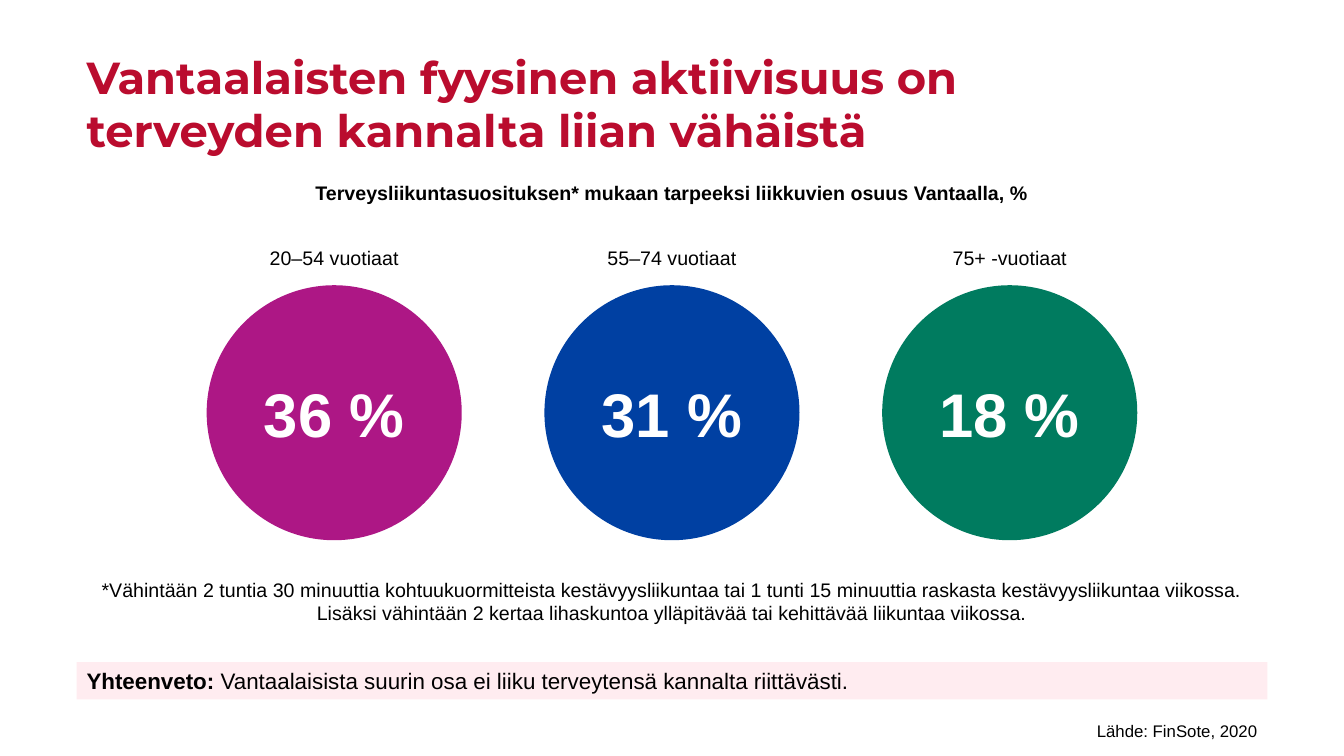
from lxml import etree
from pptx import Presentation
from pptx.dml.color import RGBColor
from pptx.enum.shapes import MSO_SHAPE
from pptx.enum.text import MSO_ANCHOR, PP_ALIGN
from pptx.oxml.ns import qn
from pptx.util import Pt

RECTANGLE, OVAL = MSO_SHAPE.RECTANGLE, MSO_SHAPE.OVAL
LEFT, CENTER, RIGHT = PP_ALIGN.LEFT, PP_ALIGN.CENTER, PP_ALIGN.RIGHT
TOP, MIDDLE = MSO_ANCHOR.TOP, MSO_ANCHOR.MIDDLE

EMU_PER_PX = 9144  # 100 px to the inch


def px(length):
    return length * EMU_PER_PX


def color(hex_code):
    return RGBColor.from_string(hex_code)


class SlideBuilder:
    """Holds the style and the slide being built."""

    HEADING_FONT = "Montserrat"
    BODY_FONT = "Arial"
    RED, BLACK, WHITE = "BA0C2E", "000000", "FFFFFF"
    PINK = "FFA3B6"

    def __init__(self, presentation):
        self.slide = presentation.slides.add_slide(presentation.slide_layouts[6])

    def add_runs(self, shape, runs, size, align=LEFT, anchor=TOP,
                 font=BODY_FONT, ink=BLACK):
        """Fill a shape with one paragraph of (text, bold) runs."""
        frame = shape.text_frame
        frame.word_wrap = True
        frame.vertical_anchor = anchor
        paragraph = frame.paragraphs[0]
        paragraph.alignment = align
        for text, bold in runs:
            run = paragraph.add_run()
            run.text = text
            run.font.name = font
            run.font.size = Pt(size)
            run.font.bold = bold
            run.font.color.rgb = color(ink)

    def text(self, box, runs, size, **style):
        textbox = self.slide.shapes.add_textbox(*map(px, box))
        self.add_runs(textbox, runs, size, **style)
        return textbox

    def title(self, box, wording):
        heading = self.text(box, [(wording, True)], 32,
                            font=self.HEADING_FONT, ink=self.RED)
        heading.text_frame.margin_top = px(9)

    def panel(self, kind, box, fill, runs, size, opacity=100, **style):
        shape = self.slide.shapes.add_shape(kind, *map(px, box))
        shape.shadow.inherit = False
        shape.line.fill.background()
        shape.fill.solid()
        shape.fill.fore_color.rgb = color(fill)
        if opacity < 100:
            fill_color = shape._element.spPr.find(qn("a:solidFill"))[0]
            alpha = etree.SubElement(fill_color, qn("a:alpha"))
            alpha.set("val", str(opacity * 1000))
        self.add_runs(shape, runs, size, anchor=MIDDLE, **style)

    def age_group(self, left, diameter, label, share, fill):
        self.text((left, 239, diameter, 34), [(label, False)], 14, align=CENTER)
        self.panel(OVAL, (left, 283, diameter, diameter), fill,
                   [(share, True)], 44, align=CENTER, ink=self.WHITE)


def main():
    presentation = Presentation()
    presentation.slide_width, presentation.slide_height = px(1333), px(750)
    builder = SlideBuilder(presentation)
    margin, content_width = 76, 1181

    # Title and chart heading
    builder.title((margin, 40, 1102, 114),
                  "Vantaalaisten fyysinen aktiivisuus on terveyden kannalta liian vähäistä")
    builder.text((margin, 175, content_width, 34),
                 [("Terveysliikuntasuosituksen* mukaan tarpeeksi liikkuvien osuus Vantaalla, %", True)],
                 14, align=CENTER)

    # Share of sufficiently active people by age group
    age_groups = [
        ("20–54 vuotiaat", "36 %", "AD1785"),
        ("55–74 vuotiaat", "31 %", "0040A2"),
        ("75+ -vuotiaat", "18 %", "007B5F"),
    ]
    first_left, pitch, diameter = 205, 335, 253
    for index, (label, share, fill) in enumerate(age_groups):
        builder.age_group(first_left + index * pitch, diameter, label, share, fill)

    # Definition of the recommendation
    builder.text((margin, 568, content_width, 57),
                 [("*Vähintään 2 tuntia 30 minuuttia kohtuukuormitteista kestävyysliikuntaa "
                   "tai 1 tunti 15 minuuttia raskasta kestävyysliikuntaa viikossa. "
                   "Lisäksi vähintään 2 kertaa lihaskuntoa ylläpitävää tai kehittävää "
                   "liikuntaa viikossa.", False)],
                 14, align=CENTER)

    # Summary and source
    builder.panel(RECTANGLE, (margin, 657, content_width, 37), builder.PINK,
                  [("Yhteenveto: ", True),
                   ("Vantaalaisista suurin osa ei liiku terveytensä kannalta riittävästi.", False)],
                  16, opacity=20)
    builder.text((1026, 710, 231, 30), [("Lähde: FinSote, 2020", False)], 12, align=RIGHT)

    presentation.save("out.pptx")


if __name__ == "__main__":
    main()
